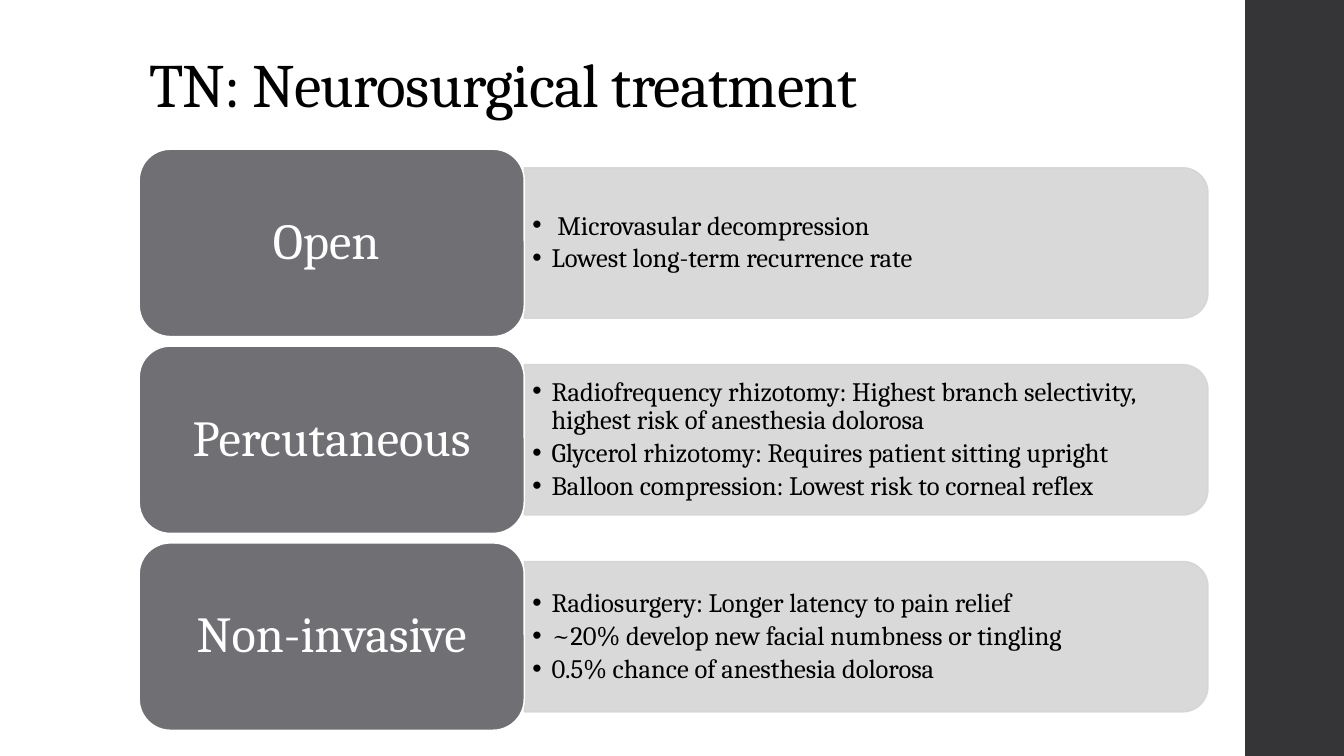
"""Build a slide on the neurosurgical treatments of TN."""
from dataclasses import dataclass

import lxml.etree
import pptx
import pptx.dml.color
import pptx.enum.shapes
import pptx.enum.text
import pptx.oxml.ns
import pptx.util

Inches = pptx.util.Inches
Pt = pptx.util.Pt
qn = pptx.oxml.ns.qn
SHAPES = pptx.enum.shapes.MSO_SHAPE
ANCHOR = pptx.enum.text.MSO_ANCHOR
ALIGN = pptx.enum.text.PP_ALIGN


@dataclass(frozen=True)
class Theme:
    """Colours and type sizes of the slide."""
    font: str = "Cambria"
    ink: str = "000000"
    white: str = "FFFFFF"
    side_band: str = "353537"
    label: str = "6F6F74"
    bar: str = "D5D5D6"
    title_size: int = 44
    label_size: int = 36
    detail_size: int = 19
    outline: float = 1.1


THEME = Theme()
TREATMENTS = [
    ("Open ", [" Microvasular decompression", "Lowest long-term recurrence rate"]),
    ("Percutaneous", [
        "Radiofrequency rhizotomy: Highest branch selectivity, highest risk of anesthesia dolorosa",
        "Glycerol rhizotomy: Requires patient sitting upright",
        "Balloon compression: Lowest risk to corneal reflex"]),
    ("Non-invasive", [
        "Radiosurgery: Longer latency to pain relief",
        "~20% develop new facial numbness or tingling",
        "0.5% chance of anesthesia dolorosa"]),
]
LEFT, FIRST_TOP = 1.38, 1.48
LABEL_WIDTH, LABEL_HEIGHT = 3.82, 1.86
ROW_PITCH = LABEL_HEIGHT * 1.05
BAR_LEFT = LEFT + LABEL_WIDTH
BAR_LENGTH, BAR_THICKNESS = 6.78, 1.49
DETAIL_WIDTH, DETAIL_HEIGHT = 6.71, 1.34


def rgb(code):
    """Turn a hex code into a colour."""
    return pptx.dml.color.RGBColor.from_string(code)


def add_block(slide, kind, box, fill, outline=None):
    """Add a flat filled shape."""
    block = slide.shapes.add_shape(kind, *map(Inches, box))
    block.shadow.inherit = False
    block.fill.solid()
    block.fill.fore_color.rgb = rgb(fill)
    if outline:
        block.line.color.rgb = rgb(outline)
        block.line.width = Pt(THEME.outline)
    else:
        block.line.fill.background()
    return block


def set_frame(frame, anchor, side, end):
    """Set wrapping, anchor and margins of a text frame."""
    frame.word_wrap = True
    frame.vertical_anchor = anchor
    frame.margin_left = frame.margin_right = Inches(side)
    frame.margin_top = frame.margin_bottom = Inches(end)


def write(paragraph, text, size, color, align=ALIGN.LEFT):
    """Fill a paragraph with styled text."""
    paragraph.text = text
    paragraph.alignment = align
    paragraph.line_spacing = 0.9
    paragraph.font.name = THEME.font
    paragraph.font.size = Pt(size)
    paragraph.font.color.rgb = rgb(color)


def add_bullet(paragraph):
    """Give a paragraph a hanging bullet."""
    properties = paragraph._p.get_or_add_pPr()
    properties.set("marL", str(Inches(0.19)))
    properties.set("indent", str(-Inches(0.19)))
    lxml.etree.SubElement(properties, qn("a:buFont")).set("typeface", "Arial")
    lxml.etree.SubElement(properties, qn("a:buChar")).set("char", "•")
    properties.append(properties.find(qn("a:defRPr")))


def add_title(slide, text):
    """Add the slightly tightened slide title."""
    title = slide.shapes.add_textbox(*map(Inches, (LEFT, 0.4, 10.6, 0.85)))
    set_frame(title.text_frame, ANCHOR.BOTTOM, 0.1, 0.05)
    paragraph = title.text_frame.paragraphs[0]
    write(paragraph, text, THEME.title_size, THEME.ink)
    paragraph.runs[0].font._element.set("spc", "-50")


def add_bar(slide, middle):
    """Add a translucent bar rounded at its right end."""
    box = (BAR_LEFT + (BAR_LENGTH - BAR_THICKNESS) / 2, middle - BAR_LENGTH / 2,
           BAR_THICKNESS, BAR_LENGTH)
    bar = add_block(slide, SHAPES.ROUND_2_SAME_RECTANGLE, box, THEME.bar, THEME.bar)
    bar.rotation = 90
    for color in bar._element.spPr.iter(qn("a:srgbClr")):
        lxml.etree.SubElement(color, qn("a:alpha")).set("val", "90000")


def add_details(slide, middle, details):
    """Add the bulleted details over a bar."""
    box = (BAR_LEFT, middle - DETAIL_HEIGHT / 2, DETAIL_WIDTH, DETAIL_HEIGHT)
    frame = slide.shapes.add_textbox(*map(Inches, box)).text_frame
    set_frame(frame, ANCHOR.MIDDLE, 0.08, 0.04)
    for index, detail in enumerate(details):
        paragraph = frame.add_paragraph() if index else frame.paragraphs[0]
        write(paragraph, detail, THEME.detail_size, THEME.ink)
        paragraph.level = 1
        paragraph.space_after = Pt(3)
        add_bullet(paragraph)


def add_label(slide, top, name):
    """Add the rounded label of a treatment."""
    box = (LEFT, top, LABEL_WIDTH, LABEL_HEIGHT)
    label = add_block(slide, SHAPES.ROUNDED_RECTANGLE, box, THEME.label, THEME.white)
    set_frame(label.text_frame, ANCHOR.MIDDLE, 0.15, 0.07)
    write(label.text_frame.paragraphs[0], name, THEME.label_size, THEME.white, ALIGN.CENTER)


def main():
    """Build and save the slide."""
    deck = pptx.Presentation()
    deck.slide_width, deck.slide_height = Inches(13.33), Inches(7.5)
    slide = deck.slides.add_slide(deck.slide_layouts[6])
    add_block(slide, SHAPES.RECTANGLE, (12.35, 0, 0.98, 7.5), THEME.side_band)
    add_title(slide, "TN: Neurosurgical treatment")
    for row, (name, details) in enumerate(TREATMENTS):
        top = FIRST_TOP + row * ROW_PITCH
        middle = top + LABEL_HEIGHT / 2
        add_bar(slide, middle)
        add_details(slide, middle, details)
        add_label(slide, top, name)
    deck.save("out.pptx")


if __name__ == "__main__":
    main()
